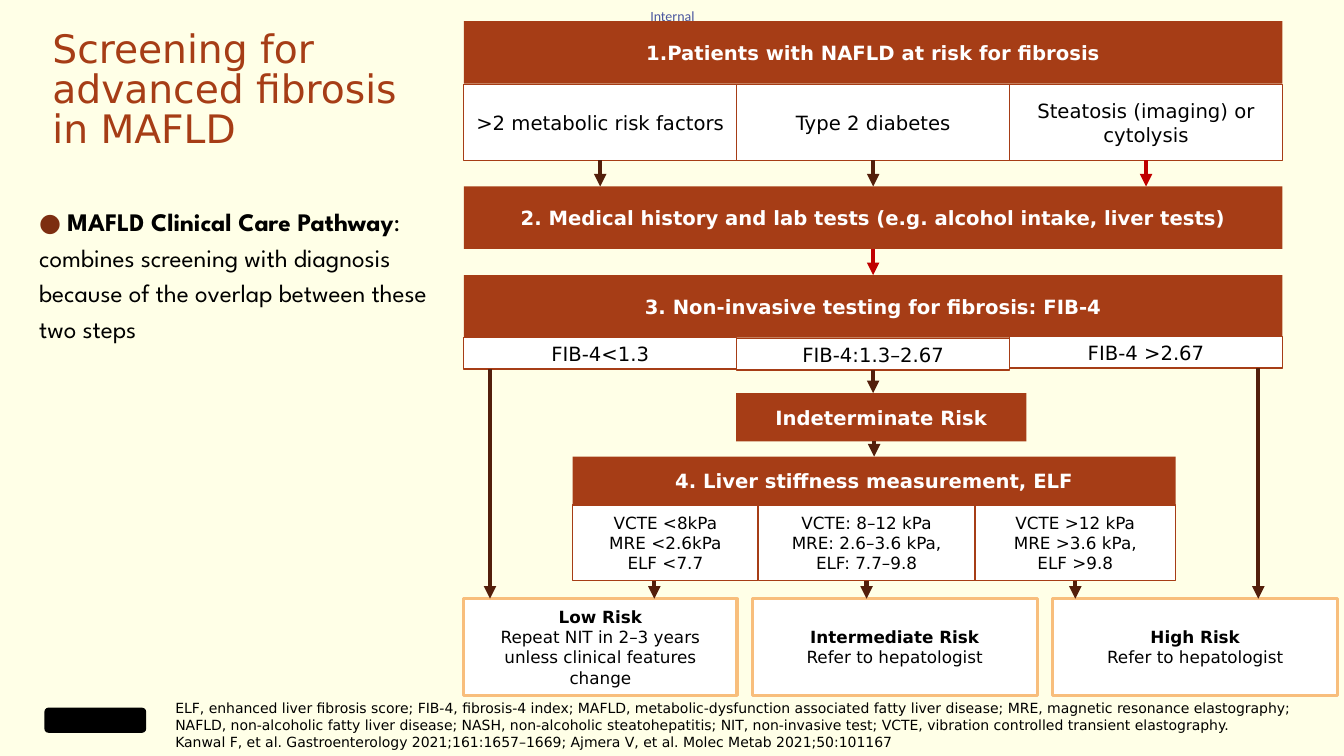
from itertools import accumulate

from lxml.etree import SubElement
from pptx import Presentation
from pptx.dml.color import RGBColor
from pptx.enum.shapes import MSO_CONNECTOR, MSO_SHAPE
from pptx.enum.text import MSO_ANCHOR, PP_ALIGN
from pptx.oxml.ns import qn
from pptx.util import Inches, Pt

# Content
TITLE = "Screening for\vadvanced fibrosis\vin MAFLD"
PATHWAY = [("● ", "bullet", False),
           ("MAFLD Clinical Care Pathway", "text", True),
           (": combines screening with diagnosis because of the overlap "
            "between these two steps", "text", False)]
LABEL = "Internal"
FOOTNOTE = (
    "ELF, enhanced liver fibrosis score; FIB-4, fibrosis-4 index; MAFLD, "
    "metabolic-dysfunction associated fatty liver disease; MRE, magnetic resonance "
    "elastography; NAFLD, non-alcoholic fatty liver disease; NASH, non-alcoholic "
    "steatohepatitis; NIT, non-invasive test; VCTE, vibration controlled transient "
    "elastography.\vKanwal F, et al. Gastroenterology 2021;161:1657–1669; "
    "Ajmera V, et al. Molec Metab 2021;50:101167")

LEFT, FULL = 4.6, 8.12
THIRD = FULL / 3
STEP4_LEFT, STEP4_WIDTHS = 5.68, [1.84, 2.15, 1.99]

# Rows of boxes: style, left, height, gap, then (key, top, width, text)
ROWS = [
    ("step", LEFT, 0.62, 0, [
        ("patients", 0.21, FULL, "1.Patients with NAFLD at risk for fibrosis")]),
    ("criterion", LEFT, 0.75, 0, [
        ("metabolic", 0.84, THIRD, ">2 metabolic risk factors"),
        ("diabetes", 0.84, THIRD, "Type 2 diabetes"),
        ("steatosis", 0.84, THIRD, "Steatosis (imaging) or cytolysis")]),
    ("step", LEFT, 0.62, 0, [
        ("history", 1.85, FULL,
         "2. Medical history and lab tests (e.g. alcohol intake, liver tests)")]),
    ("step", LEFT, 0.62, 0, [
        ("testing", 2.73, FULL, "3. Non-invasive testing for fibrosis: FIB-4")]),
    ("criterion", LEFT, 0.31, 0, [
        ("fib_low", 3.35, THIRD, "FIB-4<1.3"),
        ("fib_mid", 3.36, THIRD, "FIB-4:1.3–2.67"),
        ("fib_high", 3.34, THIRD, "FIB-4 >2.67")]),
    ("step", 7.3, 0.48, 0, [("indeterminate", 3.9, 2.88, "Indeterminate Risk")]),
    ("step", STEP4_LEFT, 0.48, 0, [
        ("stiffness", 4.53, sum(STEP4_WIDTHS), "4. Liver stiffness measurement, ELF")]),
    ("cutoff", STEP4_LEFT, 0.75, 0, [
        ("cut_low", 5.01, STEP4_WIDTHS[0], "VCTE <8kPa\nMRE <2.6kPa\nELF <7.7"),
        ("cut_mid", 5.01, STEP4_WIDTHS[1],
         "VCTE: 8–12 kPa\nMRE: 2.6–3.6 kPa,\nELF: 7.7–9.8"),
        ("cut_high", 5.01, STEP4_WIDTHS[2],
         "VCTE >12 kPa\nMRE >3.6 kPa,\nELF >9.8")]),
    ("outcome", LEFT, 0.96, 0.15, [
        ("low", 5.94, 2.71,
         "Low Risk\nRepeat NIT in 2–3 years\nunless clinical features change"),
        ("intermediate", 5.94, 2.83, "Intermediate Risk\nRefer to hepatologist"),
        ("high", 5.94, 2.83, "High Risk\nRefer to hepatologist")]),
]

# Arrows: from, to, colour, x (None means the middle of the first box)
ARROWS = [
    ("metabolic", "history", "arrow", None),
    ("diabetes", "history", "arrow", None),
    ("steatosis", "history", "alert", None),
    ("history", "testing", "alert", None),
    ("fib_mid", "indeterminate", "arrow", None),
    ("indeterminate", "stiffness", "arrow", 8.67),
    ("fib_low", "low", "arrow", 4.86),
    ("cut_mid", "intermediate", "arrow", None),
    ("cut_low", "low", "arrow", 6.49),
    ("cut_high", "high", "arrow", None),
    ("fib_high", "high", "arrow", 12.48),
]

# Theme
THEME = {
    "font": "DejaVu Sans", "body_font": "League Spartan", "label_font": "Calibri",
    "title_size": 28, "body_size": 18, "small_size": 10,
    "background": "FFFFE7", "rust": "A63D16", "text": "000000", "bullet": "7D2E10",
    "label": "4A569E", "arrow": "531F0B", "alert": "C00000",
    # fill, line, line width, text colour, size, bold on first line
    "step": ("A63D16", None, 0, "FFFFFF", 14, True),
    "criterion": ("FFFFFF", "A63D16", 1, "000000", 14, False),
    "cutoff": ("FFFFFF", "A63D16", 1, "000000", 12, False),
    "outcome": ("FFFFFF", "F8BE7C", 2.25, "000000", 12, True),
}


def rgb(code):
    return RGBColor.from_string(code)


def style_runs(paragraph, font, size, color, bold=False):
    for run in paragraph.runs:
        run.font.name, run.font.size, run.font.bold = font, Pt(size), bold
        run.font.color.rgb = rgb(color)


def add_text(left, top, width, height, wrap=True):
    frame = slide.shapes.add_textbox(
        Inches(left), Inches(top), Inches(width), Inches(height)).text_frame
    frame.word_wrap = wrap
    return frame


def add_box(left, top, width, height, style, text):
    fill, line, line_width, color, size, bold = THEME[style]
    box = slide.shapes.add_shape(MSO_SHAPE.RECTANGLE, Inches(left), Inches(top),
                                 Inches(width), Inches(height))
    box.shadow.inherit = False
    box.fill.solid()
    box.fill.fore_color.rgb = rgb(fill)
    if line:
        box.line.color.rgb = rgb(line)
        box.line.width = Pt(line_width)
    else:
        box.line.fill.background()
    frame = box.text_frame
    frame.word_wrap = True
    frame.vertical_anchor = MSO_ANCHOR.MIDDLE
    frame.text = text
    for index, paragraph in enumerate(frame.paragraphs):
        paragraph.alignment = PP_ALIGN.CENTER
        style_runs(paragraph, THEME["font"], size, color, bold and index == 0)
    return box


def add_arrow(source, target, color, x):
    middles = [box.left + box.width // 2 for box in (source, target)]
    x = middles[0] if x is None else Inches(x)
    arrow = slide.shapes.add_connector(
        MSO_CONNECTOR.STRAIGHT, x, source.top + source.height, x, target.top)
    near = Inches(0.005)
    if abs(x - middles[0]) < near:
        arrow.begin_connect(source, 2)
    if abs(x - middles[1]) < near:
        arrow.end_connect(target, 0)
    arrow.line.color.rgb = rgb(THEME[color])
    arrow.line.width = Pt(3)
    SubElement(arrow.line._get_or_add_ln(), qn("a:tailEnd"), type="triangle")
    SubElement(arrow._element.spPr, qn("a:effectLst"))


# Slide and background
prs = Presentation()
prs.slide_width, prs.slide_height = Inches(13.33), Inches(7.5)
slide = prs.slides.add_slide(prs.slide_layouts[5])
slide.background.fill.solid()
slide.background.fill.fore_color.rgb = rgb(THEME["background"])

# Title
title = slide.shapes.title
title.left, title.top = Inches(0.42), Inches(0.26)
title.width, title.height = Inches(4.1), Inches(1.3)
title.text_frame.text = TITLE
title.text_frame.vertical_anchor = MSO_ANCHOR.MIDDLE
heading = title.text_frame.paragraphs[0]
heading.alignment = PP_ALIGN.LEFT
heading.line_spacing = 0.85
style_runs(heading, THEME["font"], THEME["title_size"], THEME["rust"])

# Plain mark in the lower left corner
mark = slide.shapes.add_shape(MSO_SHAPE.ROUNDED_RECTANGLE, Inches(0.44), Inches(7.02),
                              Inches(1.01), Inches(0.25))
mark.shadow.inherit = False
mark.fill.solid()
mark.fill.fore_color.rgb = rgb(THEME["text"])
mark.line.fill.background()

# Classification label
label = add_text(6.45, 0.07, 0.47, 0.17, wrap=False)
label.margin_left = label.margin_right = label.margin_top = label.margin_bottom = 0
label.text = LABEL
style_runs(label.paragraphs[0], THEME["label_font"], THEME["small_size"], THEME["label"])

# Flowchart boxes
boxes = {}
for style, left, height, gap, cells in ROWS:
    lefts = accumulate((width + gap for _, _, width, _ in cells), initial=left)
    for (key, top, width, text), cell_left in zip(cells, lefts):
        boxes[key] = add_box(cell_left, top, width, height, style, text)

# Flowchart arrows
for source, target, color, x in ARROWS:
    add_arrow(boxes[source], boxes[target], color, x)

# Footnote
footnote = add_text(1.64, 6.89, 11.78, 0.61)
footnote.text = FOOTNOTE
style_runs(footnote.paragraphs[0], THEME["font"], THEME["small_size"], THEME["text"])

# Pathway statement
pathway = add_text(0.29, 1.94, 4.29, 1.52).paragraphs[0]
pathway.line_spacing = Pt(25.6)
for text, color, bold in PATHWAY:
    run = pathway.add_run()
    run.text = text
    run.font.name, run.font.size = THEME["body_font"], Pt(THEME["body_size"])
    run.font.bold = bold
    run.font.color.rgb = rgb(THEME[color])

prs.save("out.pptx")
